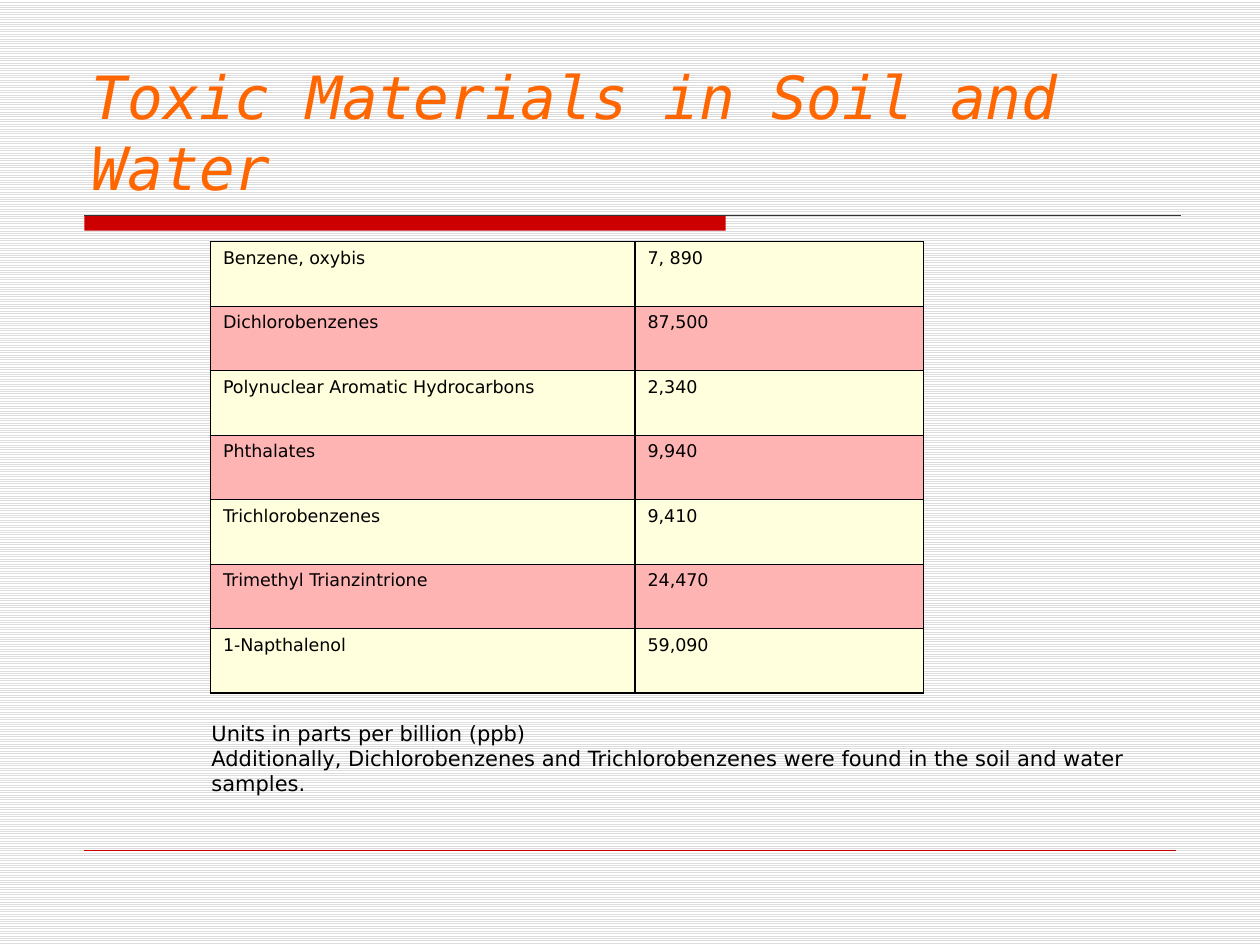
from lxml import etree
from pptx import Presentation
from pptx.dml.color import RGBColor
from pptx.enum.dml import MSO_PATTERN
from pptx.enum.shapes import MSO_CONNECTOR, MSO_SHAPE
from pptx.enum.text import MSO_ANCHOR
from pptx.oxml.ns import qn
from pptx.util import Inches, Pt

STRAIGHT = MSO_CONNECTOR.STRAIGHT
RECTANGLE = MSO_SHAPE.RECTANGLE
TOP, BOTTOM = MSO_ANCHOR.TOP, MSO_ANCHOR.BOTTOM
LIGHT_HORIZONTAL = MSO_PATTERN.LIGHT_HORIZONTAL

TITLE = "Toxic Materials in Soil and Water"
CONCENTRATIONS = [
    ("Benzene, oxybis", "7, 890"),
    ("Dichlorobenzenes", "87,500"),
    ("Polynuclear Aromatic Hydrocarbons", "2,340"),
    ("Phthalates", "9,940"),
    ("Trichlorobenzenes", "9,410"),
    ("Trimethyl Trianzintrione", "24,470"),
    ("1-Napthalenol", "59,090"),
]
NOTES = [
    "Units in parts per billion (ppb)",
    "Additionally, Dichlorobenzenes and Trichlorobenzenes were found "
    "in the soil and water samples.",
]

BLACK, RED = "000000", "CC0000"
BANDS = ["FFFFDD", "FFB4B4"]
BORDERS = {"lnL": 1, "lnR": 1, "lnT": 0.75, "lnB": 0.75}
TITLE_FONT = {"name": "DejaVu Sans Mono", "size": Pt(34), "italic": True}
TABLE_FONT = {"name": "DejaVu Sans", "size": Pt(10)}
NOTE_FONT = {"name": "DejaVu Sans", "size": Pt(12)}

WIDTH, HEIGHT = 10, 7.5
MARGIN = 0.67
RULE_TOP = 1.71
TABLE_LEFT, TABLE_TOP = 1.67, 1.92
COLUMN_WIDTHS = [3.37, 2.29]
ROW_HEIGHT = 3.58 / len(CONCENTRATIONS)
HANGING_INDENT = 0.51


def color(hex_code):
    return RGBColor.from_string(hex_code)


def write(frame, lines, font, font_color):
    for number, line in enumerate(lines):
        paragraph = frame.paragraphs[0] if number == 0 else frame.add_paragraph()
        run = paragraph.add_run()
        run.text = line
        for key, value in font.items():
            setattr(run.font, key, value)
        run.font.color.rgb = color(font_color)


def add_text(slide, box, lines, font, font_color, anchor):
    frame = slide.shapes.add_textbox(*map(Inches, box)).text_frame
    frame.word_wrap = True
    frame.vertical_anchor = anchor
    write(frame, lines, font, font_color)


def add_rule(slide, right, y, line_color, weight):
    rule = slide.shapes.add_connector(
        STRAIGHT, Inches(MARGIN), Inches(y), Inches(right), Inches(y))
    rule.line.color.rgb = color(line_color)
    rule.line.width = Pt(weight)
    etree.SubElement(rule._element.spPr, qn("a:effectLst"))


def add_title_bar(slide):
    bar = slide.shapes.add_shape(
        RECTANGLE, *map(Inches, (MARGIN, RULE_TOP, 5.09, 0.12)))
    bar.shadow.inherit = False
    bar.fill.solid()
    bar.fill.fore_color.rgb = color(RED)
    bar.line.fill.background()


def set_borders(cell):
    """Cell borders must stand before the fill in the cell properties."""
    properties = cell._tc.get_or_add_tcPr()
    for position, (side, weight) in enumerate(BORDERS.items()):
        border = etree.Element(qn(f"a:{side}"), w=str(Pt(weight)))
        fill = etree.SubElement(border, qn("a:solidFill"))
        etree.SubElement(fill, qn("a:srgbClr"), val=BLACK)
        properties.insert(position, border)


def add_concentrations(slide):
    rows, columns = len(CONCENTRATIONS), len(COLUMN_WIDTHS)
    box = TABLE_LEFT, TABLE_TOP, sum(COLUMN_WIDTHS), rows * ROW_HEIGHT
    table = slide.shapes.add_table(rows, columns, *map(Inches, box)).table
    table.first_row = table.horz_banding = False
    for column, width in zip(table.columns, COLUMN_WIDTHS):
        column.width = Inches(width)
    for r, entries in enumerate(CONCENTRATIONS):
        table.rows[r].height = Inches(ROW_HEIGHT)
        for c, entry in enumerate(entries):
            cell = table.cell(r, c)
            cell.fill.solid()
            cell.fill.fore_color.rgb = color(BANDS[r % len(BANDS)])
            set_borders(cell)
            write(cell.text_frame, [entry], TABLE_FONT, BLACK)
            indent = cell.text_frame.paragraphs[0]._p.get_or_add_pPr()
            indent.set("marL", str(Inches(HANGING_INDENT)))
            indent.set("indent", str(-Inches(HANGING_INDENT)))


def main():
    deck = Presentation()
    deck.slide_width, deck.slide_height = Inches(WIDTH), Inches(HEIGHT)
    slide = deck.slides.add_slide(deck.slide_layouts[6])

    background = slide.background.fill
    background.patterned()
    background.pattern = LIGHT_HORIZONTAL
    background.fore_color.rgb = color("DDDDDD")
    background.back_color.rgb = color("FFFFFF")

    add_title_bar(slide)
    add_rule(slide, 9.37, RULE_TOP, "333333", 0.75)
    add_rule(slide, WIDTH - MARGIN, 0.9 * HEIGHT, RED, 0.25)
    add_text(slide, (0.63, 0.33, 8.75, 1.33), [TITLE], TITLE_FONT, "FF6600", BOTTOM)
    add_concentrations(slide)
    add_text(slide, (1.58, 5.67, 7.75, 0.7), NOTES, NOTE_FONT, BLACK, TOP)
    deck.save("out.pptx")


if __name__ == "__main__":
    main()
